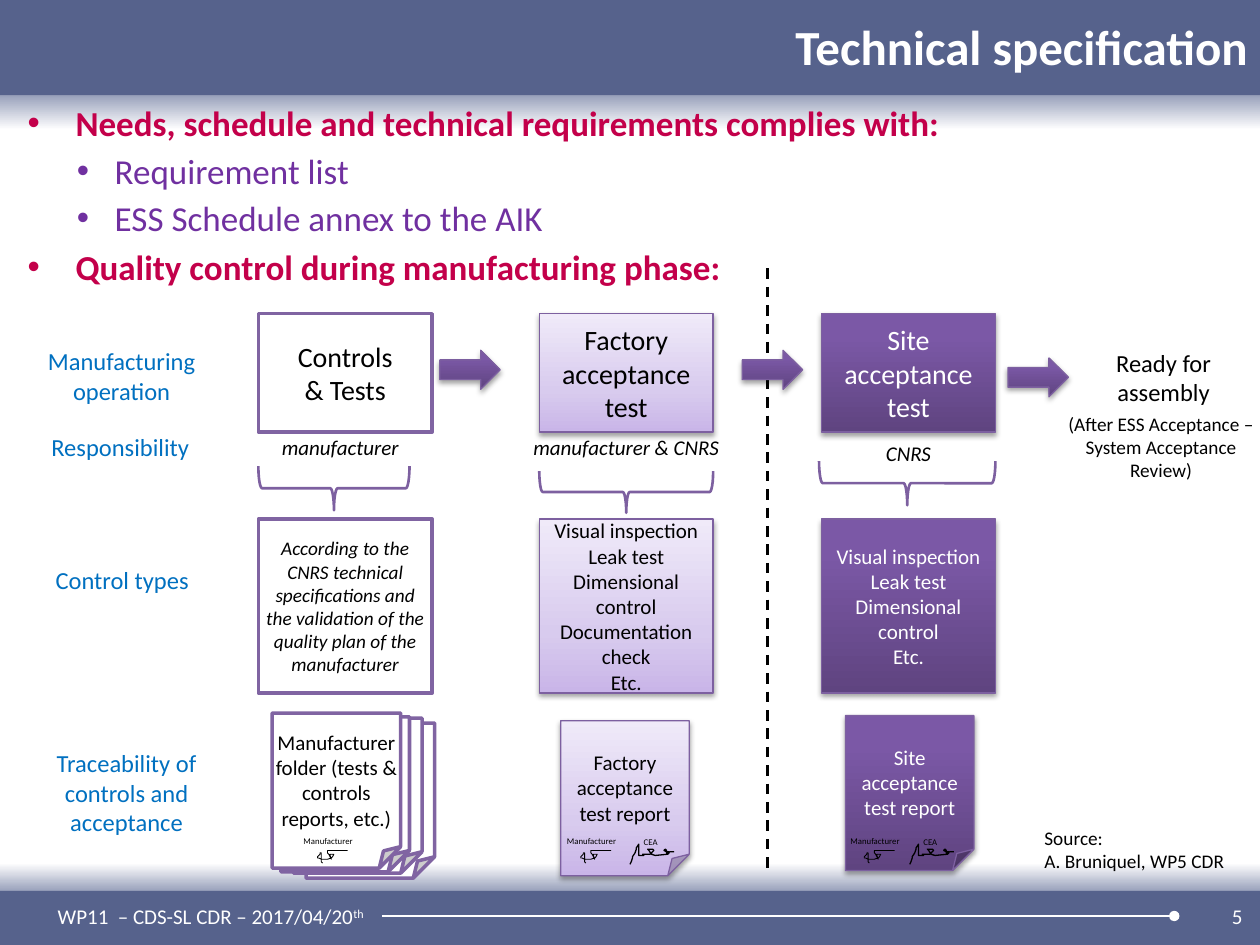
import pptx
import pptx.util
from collections import namedtuple
from dataclasses import dataclass
from lxml import etree
from pptx.dml.color import RGBColor
from pptx.enum.dml import MSO_LINE
from pptx.enum.shapes import MSO_CONNECTOR, MSO_SHAPE
from pptx.enum.text import MSO_ANCHOR, PP_ALIGN
from pptx.oxml.ns import qn

PX = 9144  # 100 px to the inch
Box = namedtuple("Box", "left top width height")


@dataclass(frozen=True)
class Theme:
    font: str = "Calibri"
    white: str = "FFFFFF"
    black: str = "000000"
    bar: str = "56628C"
    haze: str = "9AA2BC"
    key: str = "C3004A"
    detail: str = "7030A0"
    label: str = "0070C0"
    outline: str = "8064A2"
    edge: str = "7D60A0"
    pale: tuple = ((0, "C9B5E8"), (35, "D8CBEE"), (100, "F0EAF9"))
    deep: tuple = ((0, "5F4480"), (80, "7B58A6"), (100, "7C57A8"))
    title: int = 28
    body: int = 20
    heading: int = 16
    caption: int = 14
    small: int = 12
    note: int = 11
    tiny: int = 5


THEME = Theme()
MAKER_STROKE = [(4, 11), (3, 10), (3, 8), (3, 3), (2, 3), (2, 4), (0, 6), (0, 7), (1, 7), (3, 8),
                (8, 8), (11, 7), (12, 6), (13, 4), (12, 4), (10, 4), (10, 5), (11, 8), (10, 6),
                (9, 4), (8, 3), (8, 1), (13, 1), (24, 1)]
CEA_STROKE = [(0, 16), (1, 14), (2, 11), (2, 10), (4, 7), (5, 4), (5, 3), (7, 0), (7, 9), (11, 9),
              (10, 8), (16, 8), (19, 5), (18, 4), (14, 4), (15, 5), (17, 8), (20, 9), (30, 8),
              (31, 7), (31, 6), (29, 6), (27, 5), (28, 4), (29, 5), (29, 7), (32, 6), (35, 6)]


def emu(box):
    return [round(length * PX) for length in box]


def inside(box, left, top, width, height):
    return Box(box.left + left, box.top + top, width, height)


def colour(code):
    return RGBColor.from_string(code)


def write(shape, text, size=THEME.small, ink=THEME.black, bold=False, italic=False,
          align=PP_ALIGN.CENTER, anchor=MSO_ANCHOR.MIDDLE, inset=(10, 5)):
    """Fill a shape with one paragraph per line of text."""
    frame = shape.text_frame
    frame.word_wrap = True
    frame.vertical_anchor = anchor
    frame.margin_left = frame.margin_right = inset[0] * PX
    frame.margin_top = frame.margin_bottom = inset[1] * PX
    for number, line in enumerate(text.split("\n")):
        para = frame.add_paragraph() if number else frame.paragraphs[0]
        para.alignment = align
        add_span(para, line, size, ink, bold, italic)
    return frame


def add_span(para, text, size, ink, bold=False, italic=False):
    span = para.add_run()
    span.text = text
    font = span.font
    font.name, font.size, font.bold, font.italic = THEME.font, pptx.util.Pt(size), bold, italic
    font.color.rgb = colour(ink)
    return span


def add_label(page, box, text, **style):
    shape = page.shapes.add_textbox(*emu(box))
    write(shape, text, **{"anchor": MSO_ANCHOR.TOP, **style})
    return shape


def add_gradient(shape, stops):
    """Colour the shape from its bottom edge up."""
    shape.fill.gradient()
    shape.fill.gradient_angle = 90
    stop_list = shape._element.spPr.find(qn("a:gradFill")).find(qn("a:gsLst"))
    for old in list(stop_list):
        stop_list.remove(old)
    for position, code in stops:
        stop = etree.SubElement(stop_list, qn("a:gs"), pos=str(position * 1000))
        etree.SubElement(stop, qn("a:srgbClr"), val=code)


def add_shadow(shape):
    effects = shape._element.spPr.find(qn("a:effectLst"))
    shadow = etree.SubElement(effects, qn("a:outerShdw"), blurRad="39370", dist="21590",
                              dir="5400000", rotWithShape="0")
    ink = etree.SubElement(shadow, qn("a:srgbClr"), val=THEME.black)
    etree.SubElement(ink, qn("a:alpha"), val="36000")


def add_block(page, box, fill=None, kind=MSO_SHAPE.RECTANGLE, line=None, weight=0.75,
              shadow=False):
    shape = page.shapes.add_shape(kind, *emu(box))
    shape.shadow.inherit = False
    if isinstance(fill, tuple):
        add_gradient(shape, fill)
    elif fill:
        shape.fill.solid()
        shape.fill.fore_color.rgb = colour(fill)
    else:
        shape.fill.background()
    if line:
        shape.line.color.rgb = colour(line)
        shape.line.width = pptx.util.Pt(weight)
    else:
        shape.line.fill.background()
    if shadow:
        add_shadow(shape)
    return shape


def add_line(page, start, end, ink):
    line = page.shapes.add_connector(MSO_CONNECTOR.STRAIGHT, *emu(start + end))
    line.line.color.rgb = colour(ink)
    line.line.width = pptx.util.Pt(1.5)
    etree.SubElement(line._element.spPr, qn("a:effectLst"))
    return line


def add_header(page, box):
    add_block(page, box, THEME.bar)
    add_block(page, inside(box, 0, 76, 1000, 27), ((0, THEME.white), (100, THEME.haze)))
    add_label(page, inside(box, 106, -3, 894, 79), "Technical specification", size=THEME.title,
              ink=THEME.white, bold=True, align=PP_ALIGN.RIGHT, anchor=MSO_ANCHOR.MIDDLE)


def add_footer(page, box):
    add_block(page, inside(box, 0, -22, 1000, 22), ((0, THEME.haze), (100, THEME.white)))
    add_block(page, box, THEME.bar)
    rule = add_line(page, (303, box.top + 20), (932, box.top + 20), THEME.white)
    etree.SubElement(rule.line._get_or_add_ln(), qn("a:tailEnd"), type="oval")
    style = dict(ink=THEME.white, anchor=MSO_ANCHOR.MIDDLE)
    event = add_label(page, inside(box, 36, 0, 353, 40), "WP11  – CDS-SL CDR – 2017/04/20",
                      align=PP_ALIGN.LEFT, **style)
    ordinal = add_span(event.text_frame.paragraphs[0], "th", THEME.small, THEME.white)
    ordinal.font._element.set("baseline", "30000")
    add_label(page, inside(box, 763, 0, 233, 40), "5", align=PP_ALIGN.RIGHT, **style)


def add_bullets(page, box, items):
    frame = page.shapes.add_textbox(*emu(box)).text_frame
    frame.word_wrap = True
    frame.margin_left = frame.margin_right = frame.margin_bottom = 2 * PX
    frame.margin_top = 5 * PX
    for number, (level, text) in enumerate(items):
        para = frame.add_paragraph() if number else frame.paragraphs[0]
        para.level = level
        indent, hang = ((38, 38), (69, 30))[level]
        settings = para._p.get_or_add_pPr()
        settings.set("marL", str(indent * PX))
        settings.set("indent", str(-hang * PX))
        etree.SubElement(settings, qn("a:buFont"), typeface="Arial")
        etree.SubElement(settings, qn("a:buChar"), char="•")
        para.space_before = pptx.util.Pt((4, 3)[level] if number else 0)
        add_span(para, text, THEME.body, (THEME.key, THEME.detail)[level], bold=level == 0)


def add_signature(page, box, name, points, weight):
    """Name with its pen stroke; box is where the stroke goes."""
    pen = page.shapes.build_freeform(*points[0], scale=PX)
    pen.add_line_segments(points[1:], close=False)
    stroke = pen.convert_to_shape(*emu(box[:2]))
    stroke.shadow.inherit = False
    stroke.fill.background()
    stroke.line.color.rgb = colour(THEME.black)
    stroke.line.width = pptx.util.Pt(weight)
    left, top, width = (1, -11, 35) if name == "CEA" else (-21, -16, 71)
    add_label(page, inside(box, left, top, width, 19), name, size=THEME.tiny, align=PP_ALIGN.LEFT)


def add_stage(page, box, look, ink, heading, actor, brace, checks, report, sheet, signers,
              stack=(), check_style=None, report_inset=(4, 4)):
    """One column: heading, who is responsible, what is checked, and the report."""
    add_block(page, inside(box, 0, 0, 138, 94), **look)
    write(page.shapes[-1], heading, size=THEME.heading, ink=ink)
    actor_text, actor_box = actor
    add_label(page, inside(box, *actor_box), actor_text, italic=True)
    left, top, span, depth = brace
    upright = inside(box, left + (span - depth) / 2, top - (span - depth) / 2, depth, span)
    add_block(page, upright, kind=MSO_SHAPE.RIGHT_BRACE, line=THEME.edge, weight=1.5).rotation = 90
    write(add_block(page, inside(box, 0, 163, 138, 138), **look), checks, ink=ink, inset=(4, 4),
          **(check_style or {}))
    paper = inside(box, *sheet, 102, 123)
    for offset in (*stack, (0, 0)):
        front = add_block(page, inside(paper, *offset, 102, 123), kind=MSO_SHAPE.FOLDED_CORNER,
                          **look)
    write(front, report, ink=ink, inset=report_inset)
    for name, points, weight, left, top in signers:
        add_signature(page, inside(paper, left, top, 0, 0), name, points, weight)


def add_row_labels(page, box):
    for text, *place in (("Manufacturing operation", 1, 0, 155, 57),
                         ("Responsibility", 0, 68, 155, 32), ("Control types", 16, 173, 126, 32),
                         ("Traceability of controls and acceptance", 5, 319, 155, 79)):
        add_label(page, inside(box, *place), text, size=THEME.caption, ink=THEME.label,
                  inset=(4, 4))


def add_outcome(page, box):
    add_label(page, inside(box, 35, 0, 115, 57), "Ready for assembly", size=THEME.caption)
    add_label(page, inside(box, 0, 51, 181, 66),
              "(After ESS Acceptance – System Acceptance Review)", size=THEME.note)
    add_label(page, inside(box, -12, 380, 181, 47), "Source:\nA. Bruniquel, WP5 CDR",
              size=THEME.note, align=PP_ALIGN.LEFT)


def add_flow(page, box):
    plain = dict(fill=THEME.white, line=THEME.outline, weight=2)
    pale = dict(fill=THEME.pale, line=THEME.edge, shadow=True)
    deep = dict(fill=THEME.deep, line=THEME.edge, shadow=True)
    divider = add_line(page, (609, 213), (609, 694), THEME.black)
    divider.line.dash_style = MSO_LINE.DASH
    for left, top in ((349, 29), (589, 29), (800, 35)):
        add_block(page, inside(box, left, top, 48, 31), kind=MSO_SHAPE.RIGHT_ARROW, **deep)
    add_stage(page, inside(box, 205, 0, 138, 449), plain, THEME.black, "Controls\n& Tests",
              ("manufacturer", (-6, 91, 142, 30)), (0, 121, 120, 35),
              "According to the CNRS technical specifications and the validation of the "
              "quality plan of the manufacturer",
              "Manufacturer folder (tests & controls reports, etc.)", (11, 317),
              [("Manufacturer", MAKER_STROKE, 0.5, 36, 108)], stack=((27, 8), (17, 4), (7, 3)),
              check_style=dict(size=THEME.note, italic=True), report_inset=(2, 2))
    add_stage(page, inside(box, 428, 0, 138, 449), pale, THEME.black, "Factory acceptance test",
              ("manufacturer & CNRS", (-26, 91, 190, 30)), (0, 125, 138, 33),
              "Visual inspection\nLeak test\nDimensional control\nDocumentation check\nEtc.",
              "Factory acceptance test report", (17, 323),
              [("CEA", CEA_STROKE, 0.75, 55, 98), ("Manufacturer", MAKER_STROKE, 0.5, 16, 102)])
    add_stage(page, inside(box, 652, 0, 138, 449), deep, THEME.white, "Site acceptance test",
              ("CNRS", (2, 96, 134, 30)), (-2, 117, 140, 35),
              "Visual inspection\nLeak test\nDimensional control\nEtc.",
              "Site acceptance test report", (19, 319),
              [("CEA", CEA_STROKE, 0.75, 51, 102), ("Manufacturer", MAKER_STROKE, 0.5, 15, 106)])


def main():
    deck = pptx.Presentation()
    deck.slide_width, deck.slide_height = 1000 * PX, 750 * PX
    page = deck.slides.add_slide(deck.slide_layouts[6])
    add_header(page, Box(0, 0, 1000, 76))
    add_footer(page, Box(0, 707, 1000, 43))
    add_bullets(page, Box(20, 76, 980, 632), [
        (0, "Needs, schedule and technical requirements complies with:"),
        (1, "Requirement list"), (1, "ESS Schedule annex to the AIK"),
        (0, "Quality control during manufacturing phase:")])
    add_flow(page, Box(0, 249, 1000, 449))
    add_row_labels(page, Box(18, 271, 160, 398))
    add_outcome(page, Box(831, 271, 181, 427))
    deck.save("out.pptx")


if __name__ == "__main__":
    main()
